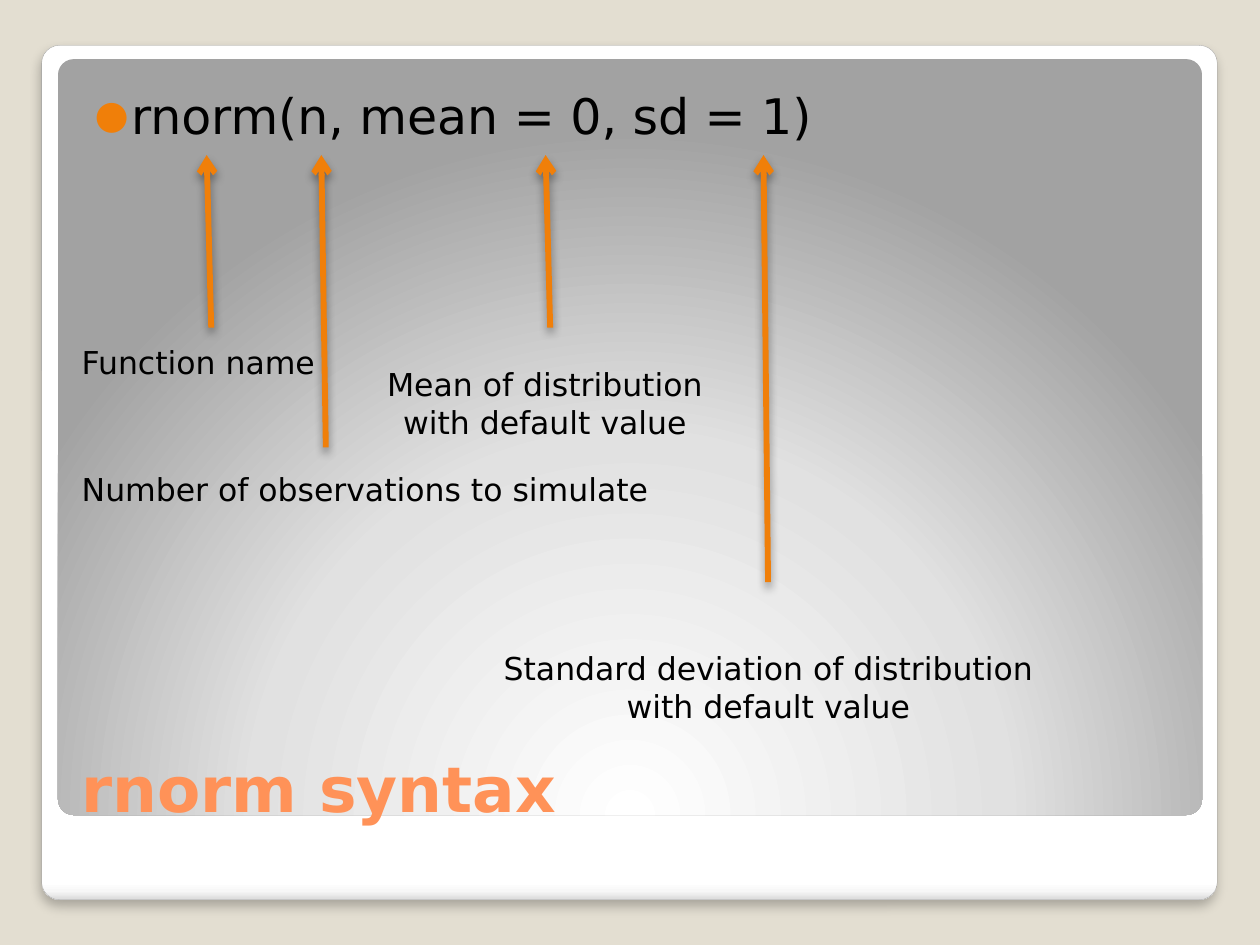
from collections import namedtuple

from pptx import Presentation
from pptx import oxml
from pptx.dml.color import RGBColor
from pptx.enum import shapes, text
from pptx.oxml import ns
from pptx.util import Pt

BACKDROP = RGBColor(0xE3, 0xDE, 0xD1)
EDGE = RGBColor(0xA4, 0xA4, 0xA4)
ORANGE = RGBColor(0xF0, 0x7F, 0x09)
TITLE = RGBColor(0xFF, 0x92, 0x58)
BLACK = RGBColor(0, 0, 0)
WHITE = RGBColor(0xFF, 0xFF, 0xFF)
SILVER = RGBColor(0xF7, 0xF7, 0xF7)
ASH = RGBColor(0xDA, 0xDA, 0xDA)
MIST = RGBColor(0xE1, 0xE1, 0xE1)
GREY = RGBColor(0xA2, 0xA2, 0xA2)
FONT = "DejaVu Sans"

# All lengths are in points
Box = namedtuple("Box", "left top width height")
FRAME = Box(23.8, 25.9, 671.8, 488.2)
PANEL = Box(33.1, 33.8, 653.8, 432)
CONTENT = Box(39.6, 41.8, 644.4, 329.8)
HEADING = Box(39.6, 392.4, 644.4, 82.8)

# Arrow tip x and start y, both measured from the content box
ARROW_TOP = 46.8
ARROW_LEAN = 2.6
ARROWS = [(78.5, 145.4), (144, 213.8), (272.2, 145.4), (396.7, 290.9)]

# Label left, top, width, height from the content box, alignment, lines
LABELS = [
    (Box(0, 150.5, 149.8, 28.8), text.PP_ALIGN.LEFT, "Function name"),
    (Box(0, 223.2, 342, 28.8), text.PP_ALIGN.LEFT,
     "Number of observations to simulate"),
    (Box(173.5, 163.4, 196.6, 51.1), text.PP_ALIGN.CENTER,
     "Mean of distribution\nwith default value"),
    (Box(239, 325.4, 321.1, 51.1), text.PP_ALIGN.CENTER,
     "Standard deviation of distribution\nwith default value"),
]


def element(tag, content="", **attributes):
    pairs = "".join(f' {name}="{value}"' for name, value in attributes.items())
    return oxml.parse_xml(
        f'<a:{tag} {ns.nsdecls("a")}{pairs}>{content}</a:{tag}>')


def add_shadow(shape, opacity, blur, distance):
    props = shape._element.spPr
    for old in props.findall(ns.qn("a:effectLst")):
        props.remove(old)
    props.append(element(
        "effectLst",
        f'<a:outerShdw blurRad="{Pt(blur)}" dist="{Pt(distance)}" dir="5400000"'
        f' algn="t" rotWithShape="0"><a:srgbClr val="{BLACK}">'
        f'<a:alpha val="{opacity * 1000}"/></a:srgbClr></a:outerShdw>'))


def add_panel(page, box, stops, direction):
    """Rounded rectangle with a gradient of (percent, colour) stops."""
    shape = page.shapes.add_shape(
        shapes.MSO_SHAPE.ROUNDED_RECTANGLE, *map(Pt, box))
    shape.adjustments[0] = 0.021
    shape.shadow.inherit = False
    shape.line.fill.background()
    colours = "".join(
        f'<a:gs pos="{percent * 1000}"><a:srgbClr val="{colour}"/></a:gs>'
        for percent, colour in stops)
    gradient = element(
        "gradFill", f"<a:gsLst>{colours}</a:gsLst>{direction}", rotWithShape=1)
    shape._element.spPr.find(ns.qn("a:prstGeom")).addnext(gradient)
    return shape


def add_text(page, box, words, size, colour=BLACK, bold=False,
             align=text.PP_ALIGN.LEFT, wrap=True, anchor=text.MSO_ANCHOR.TOP):
    shape = page.shapes.add_textbox(*map(Pt, box))
    frame = shape.text_frame
    frame.word_wrap = wrap
    frame.vertical_anchor = anchor
    frame.text = words
    for para in frame.paragraphs:
        para.alignment = align
        for span in para.runs:
            span.font.name = FONT
            span.font.size = Pt(size)
            span.font.bold = bold
            span.font.color.rgb = colour
    return shape


def draw_background(page, frame, panel):
    page.background.fill.solid()
    page.background.fill.fore_color.rgb = BACKDROP
    # White card
    card = add_panel(page, frame,
                     [(0, WHITE), (98, WHITE), (99, SILVER), (100, ASH)],
                     '<a:lin ang="5400000" scaled="0"/>')
    card.line.color.rgb = EDGE
    card.line.width = Pt(0.16)
    add_shadow(card, 25, 6, 4)
    # Grey panel, lit from below
    add_panel(page, panel, [(0, WHITE), (55, MIST), (100, GREY)],
              '<a:path path="circle"><a:fillToRect l="50000" t="175000"'
              ' r="50000" b="-75000"/></a:path>')


def draw_title(page, box):
    add_text(page, box, "rnorm syntax", 36, TITLE, bold=True,
             anchor=text.MSO_ANCHOR.BOTTOM)


def draw_call(page, box):
    """Bulleted function call at the top of the content box."""
    shape = add_text(page, box, "rnorm(n, mean = 0, sd = 1)", 28)
    frame = shape.text_frame
    frame.margin_left = Pt(14.4)
    frame.margin_top = Pt(7.2)
    para = frame.paragraphs[0]
    para.space_before = Pt(2.5)
    props = para._p.get_or_add_pPr()
    props.set("marL", str(Pt(20.9)))
    props.set("indent", str(-Pt(20.9)))
    props.append(element("buClr", f'<a:srgbClr val="{ORANGE}"/>'))
    props.append(element("buSzPct", val=80000))
    props.append(element("buFont", typeface=FONT))
    props.append(element("buChar", char="●"))


def draw_arguments(page, box):
    """Arrows up to the parts of the call, then their explanations."""
    for tip, start in ARROWS:
        arrow = page.shapes.add_connector(
            shapes.MSO_CONNECTOR.STRAIGHT,
            Pt(box.left + tip + ARROW_LEAN), Pt(box.top + start),
            Pt(box.left + tip), Pt(box.top + ARROW_TOP))
        arrow.line.color.rgb = ORANGE
        arrow.line.width = Pt(3.35)
        arrow.line._get_or_add_ln().append(element("tailEnd", type="arrow"))
        add_shadow(arrow, 40, 5.2, 3)
    for label, align, words in LABELS:
        place = label._replace(left=box.left + label.left,
                               top=box.top + label.top)
        add_text(page, place, words, 18, align=align, wrap=False)


def main():
    deck = Presentation()
    deck.slide_width, deck.slide_height = Pt(720), Pt(540)
    page = deck.slides.add_slide(deck.slide_layouts[6])
    draw_background(page, FRAME, PANEL)
    draw_title(page, HEADING)
    draw_call(page, CONTENT)
    draw_arguments(page, CONTENT)
    deck.save("out.pptx")


if __name__ == "__main__":
    main()
